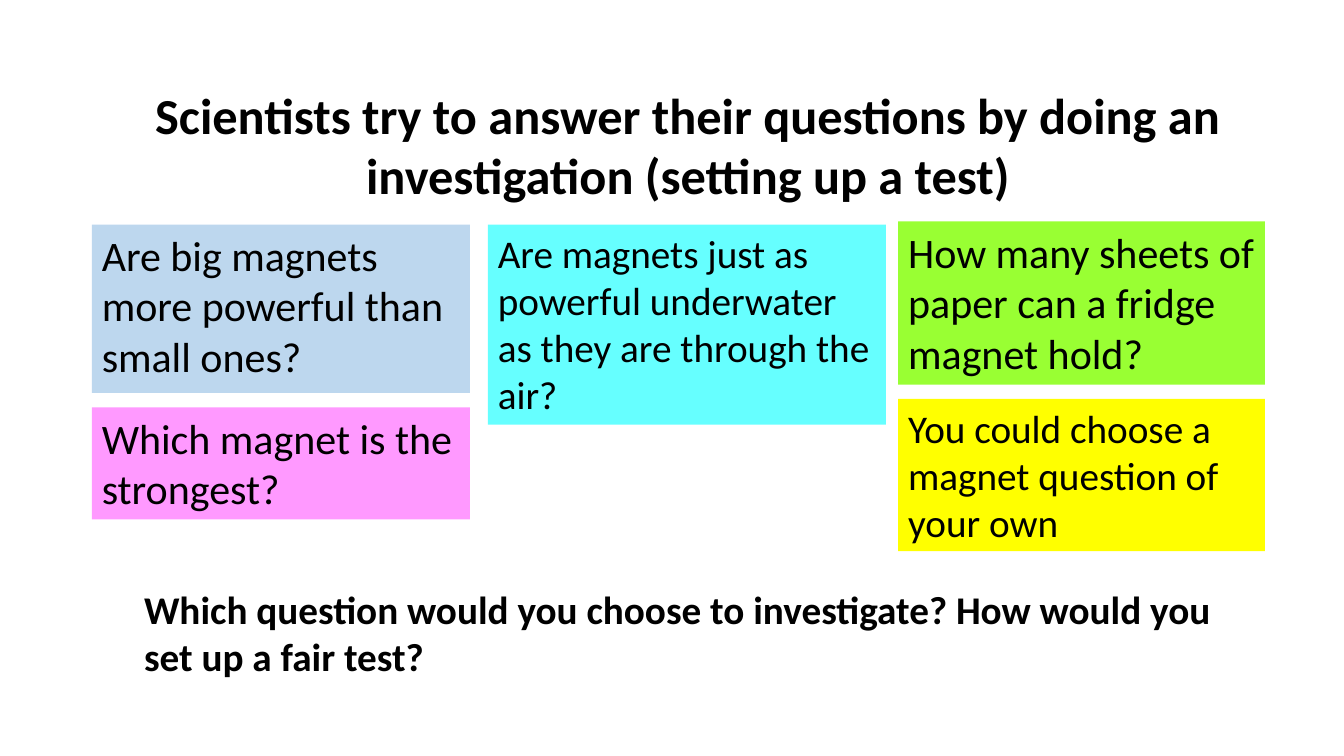
from pptx import Presentation
from pptx.dml.color import RGBColor as Color
from pptx.enum.text import MSO_ANCHOR as Anchor, PP_ALIGN as Align
from pptx.util import Pt

BLACK = Color(0x00, 0x00, 0x00)
BLUE = Color(0xBD, 0xD7, 0xEE)
PINK = Color(0xFF, 0x99, 0xFF)
CYAN = Color(0x66, 0xFF, 0xFF)
GREEN = Color(0x99, 0xFF, 0x33)
YELLOW = Color(0xFF, 0xFF, 0x00)

FONT = "Calibri"

# Left edge and width of each column of cards
LEFT = (65.6, 270)
MIDDLE = (348.5, 284.4)
RIGHT = (641.6, 262)

# Column, top, height, fill, text size, question
CARDS = [
    (LEFT, 160.4, 120.3, BLUE, 30,
     "Are big magnets more powerful than small ones?"),
    (LEFT, 291, 80, PINK, 30, "Which magnet is the strongest?"),
    (MIDDLE, 160.4, 143, CYAN, 28,
     "Are magnets just as powerful underwater as they are through the air?"),
    (RIGHT, 158.2, 116.5, GREEN, 30,
     "How many sheets of paper can a fridge magnet hold?"),
    (RIGHT, 285, 108.8, YELLOW, 28,
     "You could choose a magnet question of your own"),
]


def add_text(slide, left, top, width, height, text, size,
             bold=False, align=Align.LEFT):
    """Add a wrapped text box in the slide's font."""
    box = slide.shapes.add_textbox(Pt(left), Pt(top), Pt(width), Pt(height))
    frame = box.text_frame
    frame.word_wrap = True
    frame.vertical_anchor = Anchor.TOP
    frame.text = text
    para = frame.paragraphs[0]
    para.alignment = align
    font = para.runs[0].font
    font.name = FONT
    font.size = Pt(size)
    font.bold = bold
    font.color.rgb = BLACK
    return box


def add_card(slide, column, top, height, fill, size, text):
    """Add a question on a coloured card."""
    left, width = column
    card = add_text(slide, left, top, width, height, text, size)
    card.fill.solid()
    card.fill.fore_color.rgb = fill


def main():
    deck = Presentation()
    deck.slide_width, deck.slide_height = Pt(960), Pt(540)
    slide = deck.slides.add_slide(deck.slide_layouts[6])

    # Heading
    add_text(slide, 95.8, 56.2, 791.3, 94.3,
             "Scientists try to answer their questions by doing an "
             "investigation (setting up a test)", 36, True, Align.CENTER)

    # Question cards
    for card in CARDS:
        add_card(slide, *card)

    # Closing prompt
    add_text(slide, 95.8, 414.7, 800.6, 74.9,
             "Which question would you choose to investigate? "
             "How would you set up a fair test?", 28, True)

    deck.save("out.pptx")


if __name__ == "__main__":
    main()
